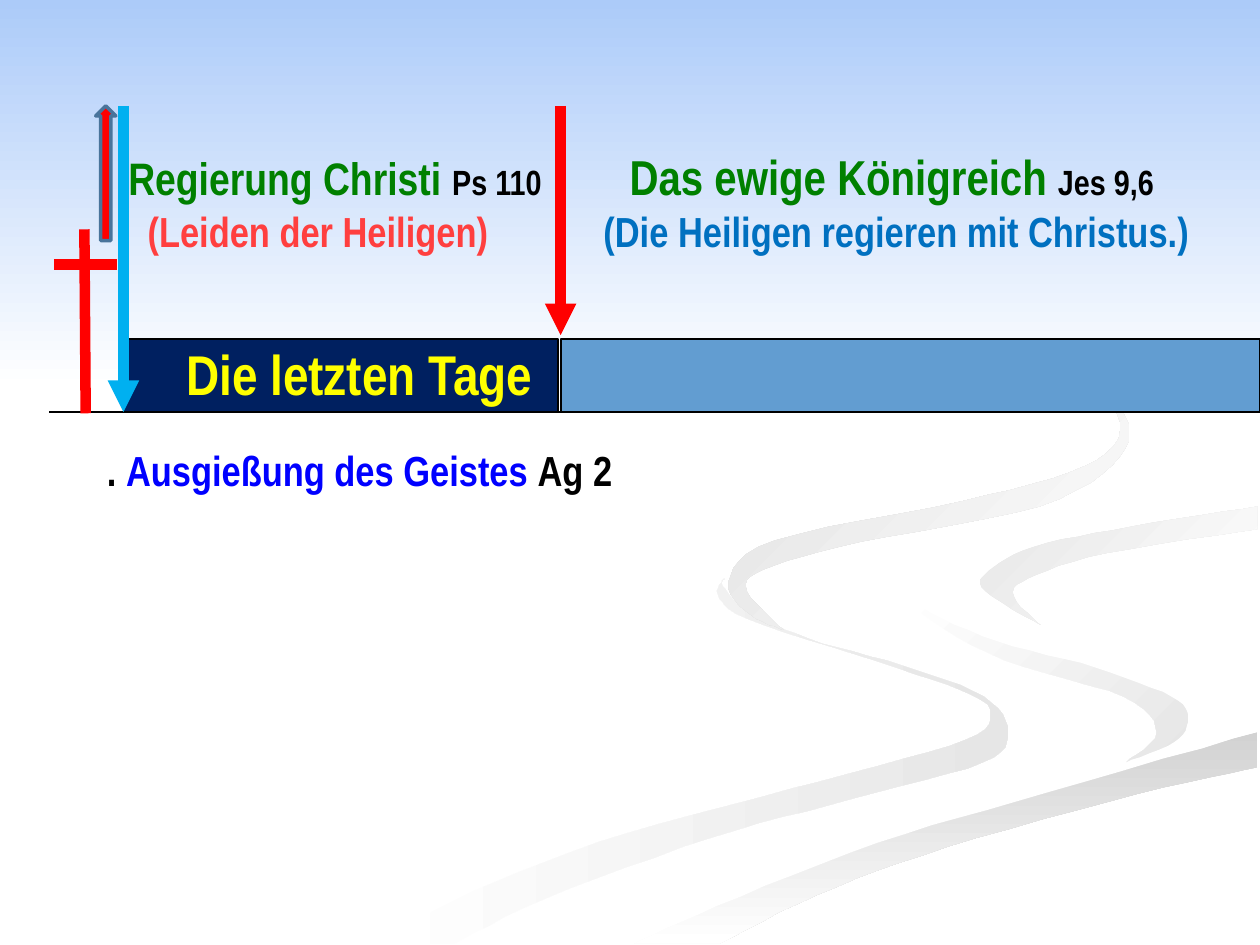
from lxml import etree
from pptx import Presentation
from pptx.dml.color import RGBColor
from pptx.enum.shapes import MSO_CONNECTOR, MSO_SHAPE
from pptx.oxml.ns import qn
from pptx.util import Pt

STRAIGHT = MSO_CONNECTOR.STRAIGHT
RECTANGLE = MSO_SHAPE.RECTANGLE
UP_ARROW = MSO_SHAPE.UP_ARROW

WHITE = RGBColor(0xFF, 0xFF, 0xFF)
BLACK = RGBColor(0, 0, 0)
SKY = RGBColor(0xAC, 0xCB, 0xF9)
PALE_GRAY = RGBColor(0xE6, 0xE6, 0xE6)
SOFT_GRAY = RGBColor(0xDC, 0xDC, 0xDC)
MID_GRAY = RGBColor(0xD2, 0xD2, 0xD2)
NAVY = RGBColor(0x00, 0x20, 0x60)
LIGHT_BLUE = RGBColor(0x62, 0x9D, 0xD1)
CYAN = RGBColor(0x00, 0xB0, 0xF0)
STEEL = RGBColor(0x49, 0x74, 0x9B)
RED = RGBColor(0xFF, 0, 0)
CORAL = RGBColor(0xFF, 0x3F, 0x3F)
YELLOW = RGBColor(0xFF, 0xFF, 0)
GREEN = RGBColor(0, 0x80, 0)
BLUE = RGBColor(0, 0, 0xFF)
ROYAL = RGBColor(0x00, 0x70, 0xC0)

SLIDE_WIDTH, SLIDE_HEIGHT = 720, 540
ROAD_UNIT = 0.72  # one hundredth of an inch
CURVE_STEPS = 6

# Timeline measures
BAR_TOP, BASE_Y, HEAVEN_Y = 193.68, 235.44, 60.48
PENTECOST_X, RETURN_X = 70.56, 320.4

prs = Presentation()
prs.slide_width, prs.slide_height = Pt(SLIDE_WIDTH), Pt(SLIDE_HEIGHT)
slide = prs.slides.add_slide(prs.slide_layouts[6])
shapes = slide.shapes


def curve(*knots):
    """Points of a Catmull-Rom spline that runs through the knots."""
    padded = [knots[0], *knots, knots[-1]]
    points = []
    for before, start, end, after in zip(padded, padded[1:], padded[2:], padded[3:]):
        for step in range(CURVE_STEPS):
            t = step / CURVE_STEPS
            points.append(tuple(
                (2 * b + (c - a) * t + (2 * a - 5 * b + 4 * c - d) * t ** 2
                 + (3 * b - a - 3 * c + d) * t ** 3) / 2
                for a, b, c, d in zip(before, start, end, after)))
    return points + [knots[-1]]


def paint(shape, colors, angle=0, outline=None, weight=1):
    """Fill with one colour or a two-colour gradient, angle clockwise."""
    shape.shadow.inherit = False
    if len(colors) == 1:
        shape.fill.solid()
        shape.fill.fore_color.rgb = colors[0]
    else:
        shape.fill.gradient()
        shape.fill.gradient_angle = (360 - angle) % 360
        for stop, color in zip(shape.fill.gradient_stops, colors):
            stop.color.rgb = color
    if outline is None:
        shape.line.fill.background()
    else:
        shape.line.color.rgb = outline
        shape.line.width = Pt(weight)


# Road banks: each shaded band lies between two curves, in road units
left_outer = curve((575, 459), (574, 466), (594, 485), (642, 507), (715, 528), (781, 553),
                   (800, 581), (780, 605), (676, 634), (564, 665), (431, 714), (361, 749))
left_inner = curve((575, 459), (570, 472), (593, 491), (697, 525), (770, 551), (786, 566),
                   (767, 587), (652, 620), (499, 661), (376, 707), (300, 749))
bend_outer = curve((724, 464), (733, 483), (792, 509), (870, 530), (930, 553), (943, 570),
                   (932, 589), (894, 605))
bend_inner = curve((724, 464), (733, 488), (797, 524), (892, 553), (918, 581), (894, 605))
front_top = curve((503, 749), (569, 719), (696, 669), (831, 629), (998, 581))
front_bottom = curve((571, 749), (649, 710), (752, 672), (903, 630), (998, 609))
right_outer = curve((998, 402), (898, 418), (821, 434), (785, 453), (782, 469), (826, 496))
right_inner = curve((998, 420), (878, 439), (816, 459), (805, 474), (826, 496))
far_outer = curve((762, 233), (843, 275), (890, 324), (889, 362), (825, 402), (683, 430),
                  (606, 452), (593, 470), (622, 500))
far_inner = curve((762, 233), (846, 279), (889, 335), (861, 370), (763, 398), (615, 429),
                  (578, 462), (596, 488), (622, 500))

# The road surface follows the banks and closes with three curves of its own
surface_left = curve((894, 605), (812, 625), (663, 668), (477, 749))
surface_right = curve((998, 538), (904, 519), (826, 496))
surface_far = curve((998, 387), (874, 408), (742, 439), (724, 464))
surface = (bend_outer + surface_left + front_top + surface_right
           + right_outer[::-1] + surface_far)

road_parts = [
    (left_outer + left_inner[::-1], [WHITE, PALE_GRAY], 0),
    (bend_outer + bend_inner[::-1], [WHITE, PALE_GRAY], 45),
    (front_top + front_bottom[::-1], [MID_GRAY, WHITE], 90),
    (surface, [WHITE], 0),
    (right_outer + right_inner[::-1], [PALE_GRAY, WHITE], 45),
    (far_outer + far_inner[::-1], [SOFT_GRAY, WHITE], 45),
]
for outline_points, colors, angle in road_parts:
    builder = shapes.build_freeform(*outline_points[0], scale=Pt(ROAD_UNIT))
    builder.add_line_segments(outline_points[1:], close=True)
    paint(builder.convert_to_shape(), colors, angle)

# Sky
sky = shapes.add_shape(RECTANGLE, 0, 0, Pt(SLIDE_WIDTH), Pt(221.76))
paint(sky, [SKY, WHITE], 90)

# Periods: the last days, then the kingdom
periods = [(PENTECOST_X, 318.96, NAVY), (RETURN_X, SLIDE_WIDTH, LIGHT_BLUE)]
for start, end, color in periods:
    period = shapes.add_shape(RECTANGLE, Pt(start), Pt(BAR_TOP), Pt(end - start),
                              Pt(BASE_Y - BAR_TOP))
    paint(period, [color], outline=BLACK)

# Base line, cross, return of Christ and outpouring: ends, colour, weight, arrowhead
strokes = [
    ((28.08, BASE_Y, 603.36, BASE_Y), BLACK, 1, False),
    ((48.24, 131.04, 48.96, 236.16), RED, 6, False),
    ((30.96, 151.2, 66.96, 151.2), RED, 6, False),
    ((RETURN_X, HEAVEN_Y, RETURN_X, 191.52), RED, 6, True),
    ((PENTECOST_X, HEAVEN_Y, PENTECOST_X, BASE_Y), CYAN, 6, True),
]
for ends, color, weight, has_head in strokes:
    stroke = shapes.add_connector(STRAIGHT, *[Pt(value) for value in ends])
    stroke.line.color.rgb = color
    stroke.line.width = Pt(weight)
    if has_head:
        etree.SubElement(stroke.line._get_or_add_ln(), qn("a:tailEnd"), type="triangle")
    etree.SubElement(stroke._element.spPr, qn("a:effectLst"))

# Ascension
ascension = shapes.add_shape(UP_ARROW, Pt(54.72), Pt(HEAVEN_Y), Pt(11.52), Pt(77.04))
paint(ascension, [RED], outline=STEEL, weight=2)

# Labels: box, then paragraphs of tab stops and runs (text, size, colour)
labels = [
    ((99.36, 190.3, 230.4, 46.08),
     [([], [("Die letzten Tage", 32, YELLOW)])]),
    ((54, 250.56, 323.28, 239.76),
     [([], [(". ", 24, BLACK), ("Ausgießung des Geistes ", 24, BLUE),
            ("Ag 2", 24, BLACK)])]),
    ((66.24, 80.2, 649.44, 70.56),
     [([286.5], [("Regierung Christi ", 26, GREEN), ("Ps 110\t", 20, BLACK),
                 ("Das ewige Königreich ", 28, GREEN), ("Jes 9,6", 20, BLACK)]),
      ([11, 271.5], [("\t(Leiden der Heiligen)\t", 24, CORAL),
                     ("(Die Heiligen regieren mit Christus.)", 24, ROYAL)])]),
]
for box, paragraphs in labels:
    frame = shapes.add_textbox(*[Pt(value) for value in box]).text_frame
    frame.word_wrap = True
    for i, (tabs, runs) in enumerate(paragraphs):
        paragraph = frame.add_paragraph() if i else frame.paragraphs[0]
        for text, size, color in runs:
            run = paragraph.add_run()
            run.text = text
            run.font.name = "Arial Narrow"
            run.font.bold = True
            run.font.size = Pt(size)
            run.font.color.rgb = color
        if tabs:
            tab_list = etree.SubElement(paragraph._p.get_or_add_pPr(), qn("a:tabLst"))
            for tab in tabs:
                etree.SubElement(tab_list, qn("a:tab"), pos=str(Pt(tab)), algn="l")

prs.save("out.pptx")
